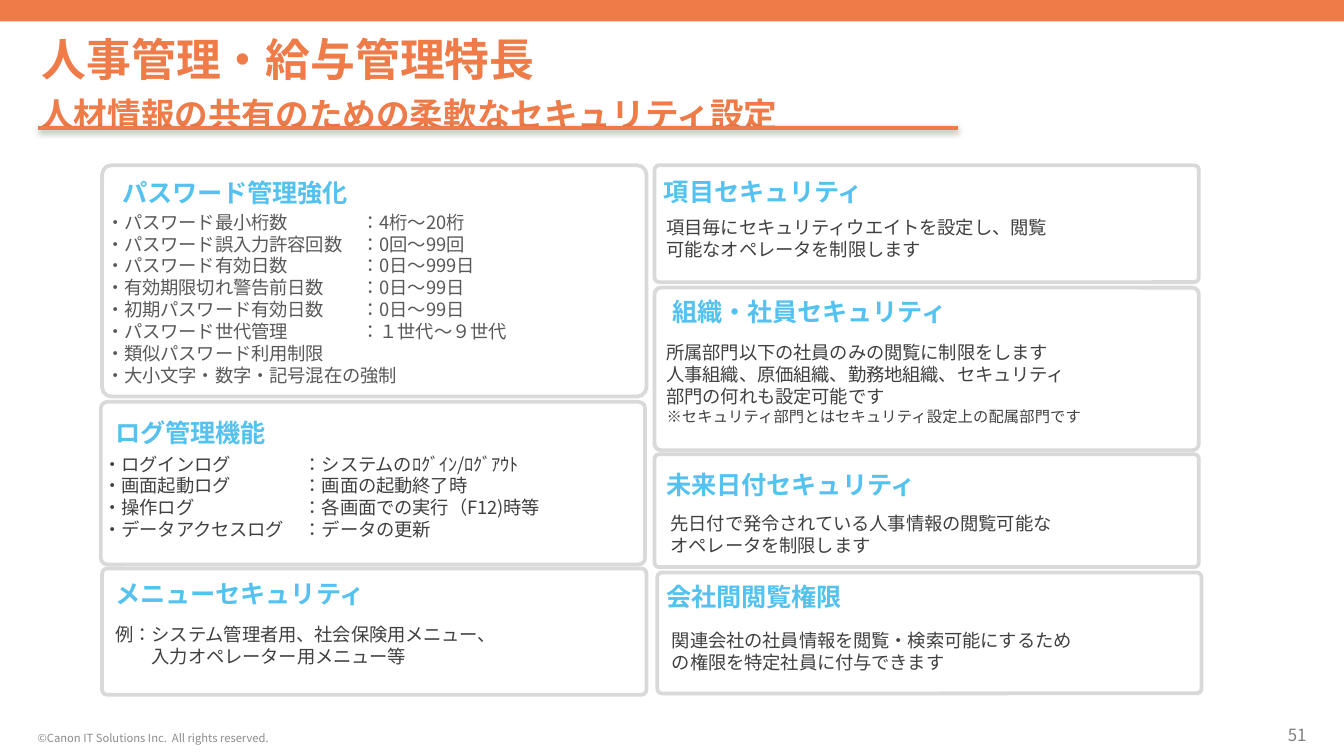
from pptx import Presentation
from pptx.dml.color import RGBColor
from pptx.enum.lang import MSO_LANGUAGE_ID
from pptx.enum.shapes import MSO_CONNECTOR, MSO_SHAPE
from pptx.enum.text import MSO_ANCHOR, PP_ALIGN
from pptx.oxml import parse_xml
from pptx.oxml.ns import nsdecls
from pptx.oxml.xmlchemy import OxmlElement
from pptx.util import Inches, Pt

FONT = "Noto Sans CJK JP"
ORANGE, BLUE, DARK, GREY = "EE7B48", "54C2F0", "404040", "585858"
COLS = 1000
ROWS = COLS * 9 / 16
WIDE, HEAD = 405, (318, 37)

TITLE = "人事管理・給与管理特長"
LEAD = "人材情報の共有のための柔軟なセキュリティ設定"
RIGHTS = "©Canon IT Solutions Inc.  All rights reserved."
PAGE = "51"

# column, row, height, heading offset, body offset, tab, colour, heading, lines
PANELS = [
    (76, 123, 172, (15, 2), (3, 34), 190, GREY, "パスワード管理強化", [
        "・パスワード最小桁数\t：4桁～20桁",
        "・パスワード誤入力許容回数\t：0回～99回",
        "・パスワード有効日数\t：0日～999日",
        "・有効期限切れ警告前日数\t：0日～99日",
        "・初期パスワード有効日数\t：0日～99日",
        "・パスワード世代管理\t：１世代～９世代",
        "・類似パスワード利用制限",
        "・大小文字・数字・記号混在の強制"]),
    (75, 299, 121, (11, 4), (2, 38), 149, DARK, "ログ管理機能", [
        "・ログインログ\t：システムのﾛｸﾞｲﾝ/ﾛｸﾞｱｳﾄ",
        "・画面起動ログ\t：画面の起動終了時",
        "・操作ログ\t：各画面での実行（F12)時等",
        "・データアクセスログ\t：データの更新"]),
    (76, 423, 94, (10, 0), (10, 41), 27, DARK, "メニューセキュリティ", [
        "例：システム管理者用、社会保険用メニュー、",
        "\t入力オペレーター用メニュー等"]),
    (487, 123, 87, (7, 1), (9, 38), 0, DARK, "項目セキュリティ", [
        "項目毎にセキュリティウエイトを設定し、閲覧",
        "可能なオペレータを制限します"]),
    (487, 214, 121, (13, -1), (9, 40), 0, DARK, "組織・社員セキュリティ", [
        "所属部門以下の社員のみの閲覧に制限をします",
        "人事組織、原価組織、勤務地組織、セキュリティ",
        "部門の何れも設定可能です",
        "※セキュリティ部門とはセキュリティ設定上の配属部門です"]),
    (487, 338, 84, (9, 4), (12, 43), 0, DARK, "未来日付セキュリティ", [
        "先日付で発令されている人事情報の閲覧可能な",
        "オペレータを制限します"]),
    (489, 426, 90, (7, -1), (11, 42), 0, DARK, "会社間閲覧権限", [
        "関連会社の社員情報を閲覧・検索可能にするため",
        "の権限を特定社員に付与できます"]),
]


def rgb(code):
    """Turn a hex string into a colour."""
    return RGBColor.from_string(code)


def cell(*nums):
    """Turn grid cells into lengths."""
    return [Inches(n / 100) for n in nums]


def place(item, box):
    """Move an item to a box on the grid."""
    for name, val in zip(("left", "top", "width", "height"), cell(*box)):
        setattr(item, name, val)


def write(item, lines, size, color, bold=False, inset=0,
          anchor=MSO_ANCHOR.TOP, align=PP_ALIGN.LEFT, tab=0):
    """Fill an item with formatted lines of text."""
    frame = item.text_frame
    pad = Inches(inset)
    form = dict(word_wrap=True, vertical_anchor=anchor, margin_left=pad,
                margin_right=pad, margin_top=pad, margin_bottom=pad)
    for name, val in form.items():
        setattr(frame, name, val)
    for num, line in enumerate(lines):
        para = frame.paragraphs[0] if num == 0 else frame.add_paragraph()
        para.alignment = align
        para.space_before = Pt(0)
        props = para._p.get_or_add_pPr()
        if item.is_placeholder:
            props.set("marL", "0")
            props.set("indent", "0")
            props.append(OxmlElement("a:buNone"))
        if tab:
            props.append(parse_xml(
                f'<a:tabLst {nsdecls("a")}>'
                f'<a:tab pos="{cell(tab)[0]}" algn="l"/></a:tabLst>'))
        run = para.add_run()
        run.text = line
        pts = 8.25 if line.startswith("※") else size
        for name, val in dict(name=FONT, size=Pt(pts), bold=bold,
                              language_id=MSO_LANGUAGE_ID.JAPANESE).items():
            setattr(run.font, name, val)
        run.font.color.rgb = rgb(color)
        east = OxmlElement("a:ea")
        east.set("typeface", FONT)
        run.font._element.append(east)


def label(slide, box, lines, size, color, **form):
    """Add a text box."""
    item = slide.shapes.add_textbox(*cell(*box))
    write(item, lines, size, color, **form)


def block(slide, kind, box, fill, edge=None):
    """Add a filled shape."""
    item = slide.shapes.add_shape(kind, *cell(*box))
    item.shadow.inherit = False
    item.fill.solid()
    item.fill.fore_color.rgb = rgb(fill)
    if edge:
        item.line.color.rgb = rgb(edge)
        item.line.width = Pt(2)
    else:
        item.line.fill.background()
    return item


def rule(slide):
    """Draw the shaded line below the lead."""
    item = slide.shapes.add_connector(MSO_CONNECTOR.STRAIGHT,
                                      *cell(28, 95, 713, 95))
    item.line.color.rgb = rgb(ORANGE)
    item.line.width = Pt(2)
    item._element.spPr.append(parse_xml(
        f'<a:effectLst {nsdecls("a")}><a:outerShdw blurRad="{Pt(3.1)}" '
        f'dist="{Pt(1.6)}" dir="5400000" rotWithShape="0">'
        '<a:srgbClr val="000000"><a:alpha val="38000"/></a:srgbClr>'
        '</a:outerShdw></a:effectLst>'))


def panel(slide, col, row, high, head, body, tab, color, name, lines):
    """Add a framed panel with its heading and lines."""
    frame = block(slide, MSO_SHAPE.ROUNDED_RECTANGLE,
                  (col, row, WIDE, high), "FFFFFF", "D9D9D9")
    frame.adjustments[0] = 0.04
    label(slide, (col + head[0], row + head[1], *HEAD), [name], 13.5, BLUE,
          bold=True, anchor=MSO_ANCHOR.MIDDLE)
    label(slide, (col + body[0], row + body[1], WIDE - 2 * body[0],
                  high - body[1]), lines, 9.75, color, tab=tab)


def main():
    """Build the slide."""
    deck = Presentation()
    deck.slide_width, deck.slide_height = cell(COLS, ROWS)
    slide = deck.slides.add_slide(deck.slide_layouts[1])
    title, lead = slide.placeholders
    block(slide, MSO_SHAPE.RECTANGLE, (0, 0, COLS, 16), ORANGE)
    place(title, (31, 24, 787, 39))
    write(title, [TITLE], 24, ORANGE, bold=True, anchor=MSO_ANCHOR.MIDDLE)
    place(lead, (20, 65, 669, 34))
    write(lead, [LEAD], 18, ORANGE, bold=True, inset=0.05)
    lead.text_frame.margin_left = Inches(0.1)
    rule(slide)
    for data in PANELS:
        panel(slide, *data)
    label(slide, (28, 539, 236, 15), [RIGHTS], 6, "8C8C8C",
          anchor=MSO_ANCHOR.BOTTOM)
    label(slide, (933, 539, 39, 15), [PAGE], 9, "808080",
          anchor=MSO_ANCHOR.BOTTOM, align=PP_ALIGN.RIGHT)
    deck.save("out.pptx")


if __name__ == "__main__":
    main()
